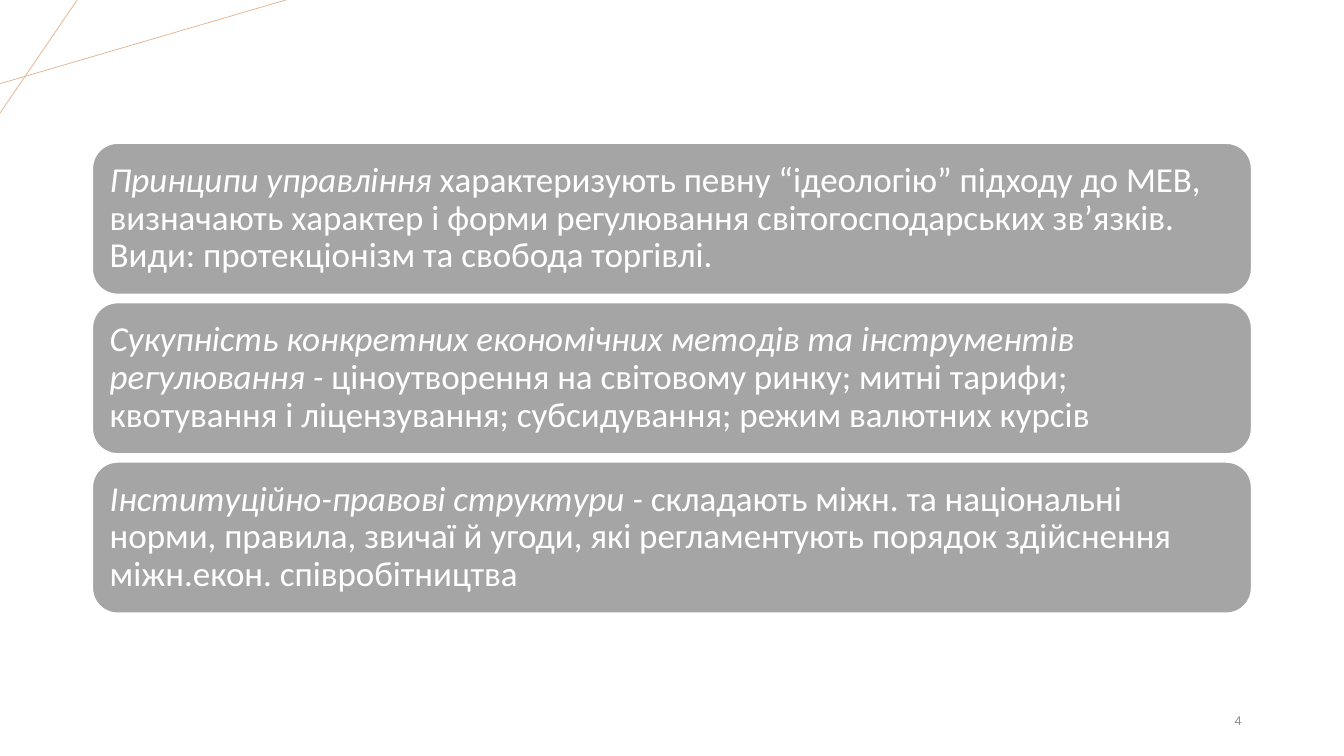
from lxml import etree
from pptx import Presentation
from pptx import util as u
from pptx.dml.color import RGBColor
from pptx.enum import shapes, text
from pptx.oxml.ns import qn

WHITE = "FFFFFF"
GREY = "A5A5A5"
ACCENT = "E2B18D"
NUMBER_GREY = "8C8C8C"

METHODS = [
    ("Принципи управління",
     " характеризують певну “ідеологію” підходу до МЕВ, визначають характер і форми "
     "регулювання світогосподарських зв’язків. Види: протекціонізм та свобода торгівлі."),
    ("Сукупність конкретних економічних методів та інструментів регулювання - ",
     "ціноутворення на світовому ринку; митні тарифи; квотування і ліцензування; "
     "субсидування; режим валютних курсів"),
    ("Інституційно-правові структури - ",
     "складають міжн. та національні норми, правила, звичаї й угоди, які регламентують "
     "порядок здійснення міжн.екон. співробітництва"),
]


def color(value):
    return RGBColor.from_string(value)


def add_run(paragraph, content, font, size, fill, italic=False):
    run = paragraph.add_run()
    run.text = content
    run.font.name = font
    run.font.size = u.Pt(size)
    run.font.italic = italic
    run.font.color.rgb = color(fill)


def add_corner_lines(slide, left, top, width, height):
    ends = [
        ((left, top + 0.74 * height), (left + width, top)),
        ((left + 0.27 * width, top), (left, top + height)),
    ]
    for start, end in ends:
        line = slide.shapes.add_connector(
            shapes.MSO_CONNECTOR.STRAIGHT, *map(u.Cm, start + end))
        line.line.color.rgb = color(ACCENT)
        line.line.width = u.Pt(0.5)
        etree.SubElement(line._element.spPr, qn("a:effectLst"))


def add_method_card(slide, left, top, width, height, term, description):
    card = slide.shapes.add_shape(
        shapes.MSO_SHAPE.ROUNDED_RECTANGLE, *map(u.Cm, (left, top, width, height)))
    card.shadow.inherit = False
    card.fill.solid()
    card.fill.fore_color.rgb = color(GREY)
    card.line.color.rgb = color(WHITE)
    card.line.width = u.Pt(1)
    frame = card.text_frame
    frame.word_wrap = True
    frame.vertical_anchor = text.MSO_ANCHOR.MIDDLE
    frame.margin_left = frame.margin_right = u.Cm(0.25)
    frame.margin_top = frame.margin_bottom = u.Cm(0.25)
    paragraph = frame.paragraphs[0]
    paragraph.alignment = text.PP_ALIGN.LEFT
    paragraph.line_spacing = 0.9
    add_run(paragraph, term, "Calibri", 25, WHITE, italic=True)
    add_run(paragraph, description, "Calibri", 25, WHITE)


def add_method_list(slide, left, top, width, height, gap):
    card_height = (height - gap * (len(METHODS) - 1)) / len(METHODS)
    for index, (term, description) in enumerate(METHODS):
        card_top = top + index * (card_height + gap)
        add_method_card(slide, left, card_top, width, card_height, term, description)


def add_slide_number(slide, left, top, width, height, number):
    box = slide.shapes.add_textbox(*map(u.Cm, (left, top, width, height)))
    frame = box.text_frame
    frame.word_wrap = True
    frame.vertical_anchor = text.MSO_ANCHOR.MIDDLE
    paragraph = frame.paragraphs[0]
    paragraph.alignment = text.PP_ALIGN.RIGHT
    add_run(paragraph, number, "Arial", 9, NUMBER_GREY)


def main():
    presentation = Presentation()
    presentation.slide_width = u.Cm(33.87)
    presentation.slide_height = u.Cm(19.05)
    slide = presentation.slides.add_slide(presentation.slide_layouts[6])
    add_corner_lines(slide, 0, 0, 7.2, 2.85)
    add_slide_number(slide, 23.92, 17.66, 7.62, 1.01, "4")
    add_method_list(slide, 2.33, 3.61, 29.21, 11.84, 0.21)
    presentation.save("out.pptx")


if __name__ == "__main__":
    main()
